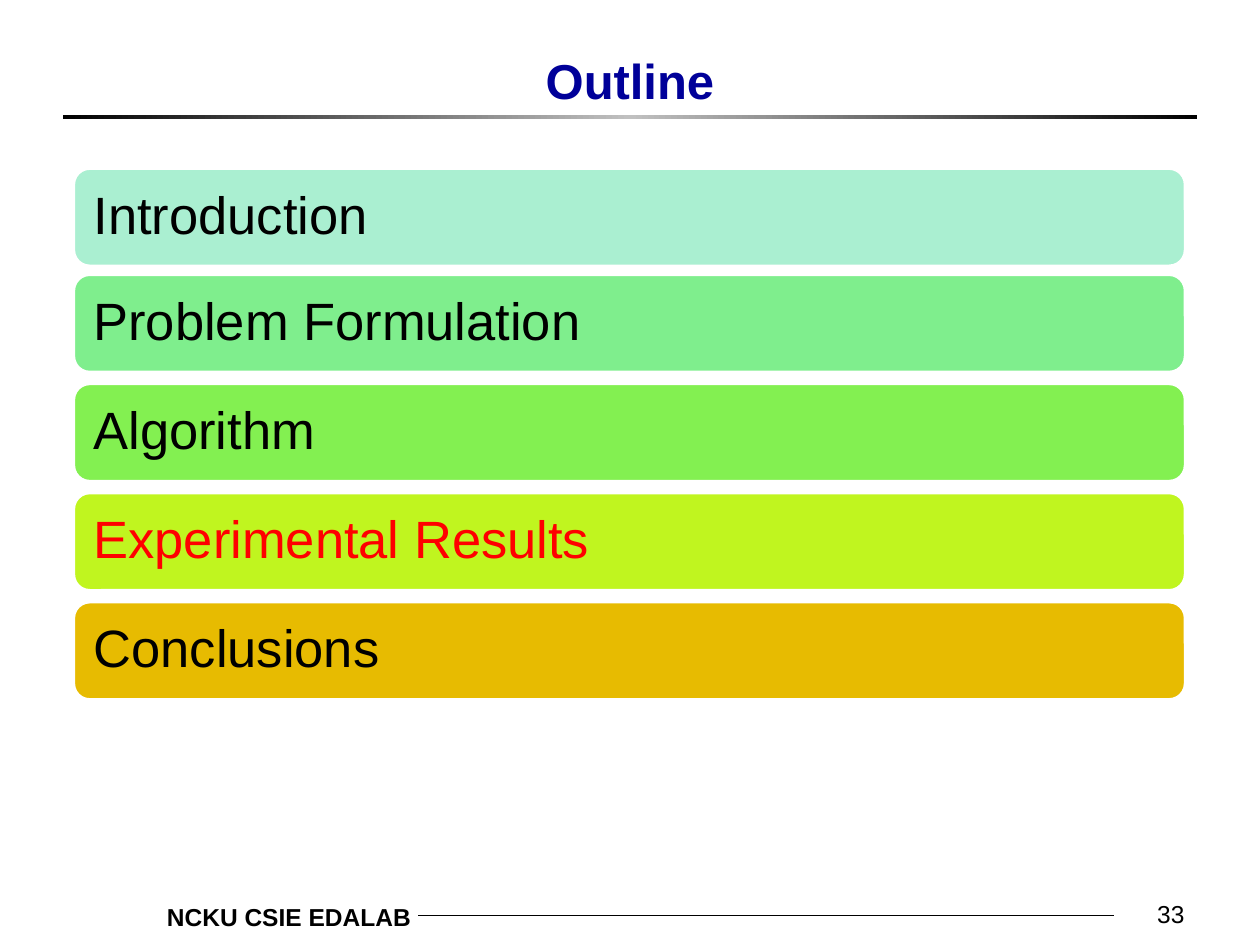
"""Build the outline slide with five coloured section bars."""
from copy import deepcopy
from lxml.etree import SubElement
from pptx import Presentation
from pptx.dml.color import RGBColor
from pptx.enum.shapes import MSO_CONNECTOR, MSO_SHAPE
from pptx.enum.text import MSO_ANCHOR, MSO_AUTO_SIZE, PP_ALIGN
from pptx.oxml.ns import qn
from pptx.util import Cm, Pt


def color(code):
    return RGBColor.from_string(code)


def write(shape, text, size, code, align, anchor, bold=False):
    frame = shape.text_frame
    frame.text = text
    frame.word_wrap = True
    frame.auto_size = MSO_AUTO_SIZE.NONE
    frame.vertical_anchor = anchor
    paragraph = frame.paragraphs[0]
    paragraph.alignment = align
    font = paragraph.font
    font.name = "Arial"
    font.size = Pt(size)
    font.bold = bold
    font.color.rgb = color(code)
    return frame


presentation = Presentation()
presentation.slide_width = Cm(25.4)
presentation.slide_height = Cm(19.05)
slide = presentation.slides.add_slide(presentation.slide_layouts[5])
shapes = slide.shapes

heading = shapes.title
heading.left, heading.top = Cm(1.9), Cm(0)
heading.width, heading.height = Cm(21.6), Cm(2.34)
write(heading, "Outline", 28, "000099", PP_ALIGN.CENTER, MSO_ANCHOR.BOTTOM, True)

heading_rule = shapes.add_shape(
    MSO_SHAPE.RECTANGLE, Cm(1.27), Cm(2.32), Cm(22.86), Cm(0.08))
heading_rule.shadow.inherit = False
heading_rule.line.fill.background()
heading_rule.fill.gradient()
heading_rule.fill.gradient_angle = 0
for stop, code in zip(heading_rule.fill.gradient_stops, ("000000", "C0C0C0")):
    stop.color.rgb = color(code)
stops = heading_rule._element.spPr.find(".//" + qn("a:gsLst"))
stops.append(deepcopy(stops[0]))
for stop, position in zip(stops, (0, 50000, 100000)):
    stop.set("pos", str(position))

sections = [
    ("Introduction", 3.39, "AAEFD1", "000000"),
    ("Problem Formulation", 5.53, "7FEE8D", "000000"),
    ("Algorithm", 7.73, "83F051", "000000"),
    ("Experimental Results", 9.93, "C0F51F", "FF0000"),
    ("Conclusions", 12.13, "E7BB01", "000000"),
]
for name, top, fill_code, text_code in sections:
    section = shapes.add_shape(
        MSO_SHAPE.ROUNDED_RECTANGLE, Cm(1.48), Cm(top), Cm(22.42), Cm(1.98))
    section.shadow.inherit = False
    section.fill.solid()
    section.fill.fore_color.rgb = color(fill_code)
    section.line.color.rgb = color("FFFFFF")
    section.line.width = Pt(2)
    label = write(section, name, 30, text_code, PP_ALIGN.LEFT, MSO_ANCHOR.MIDDLE)
    label.margin_left = label.margin_right = Cm(0.31)
    label.margin_top = label.margin_bottom = Cm(0.31)
    label.paragraphs[0].line_spacing = 0.9

footer_rule = shapes.add_connector(
    MSO_CONNECTOR.STRAIGHT, Cm(8.43), Cm(18.45), Cm(22.45), Cm(18.45))
footer_rule.line.color.rgb = color("000000")
footer_rule.line.width = Pt(0.5)
SubElement(footer_rule._element.spPr, qn("a:effectLst"))

lab = shapes.add_textbox(Cm(2.29), Cm(18.06), Cm(6.25), Cm(0.86))
write(lab, "NCKU CSIE EDALAB", 14, "000000", PP_ALIGN.RIGHT, MSO_ANCHOR.TOP, True)

page_number = shapes.add_textbox(Cm(18.84), Cm(17.58), Cm(5.29), Cm(1.27))
write(page_number, "33", 14, "000000", PP_ALIGN.RIGHT, MSO_ANCHOR.BOTTOM)

presentation.save("out.pptx")
